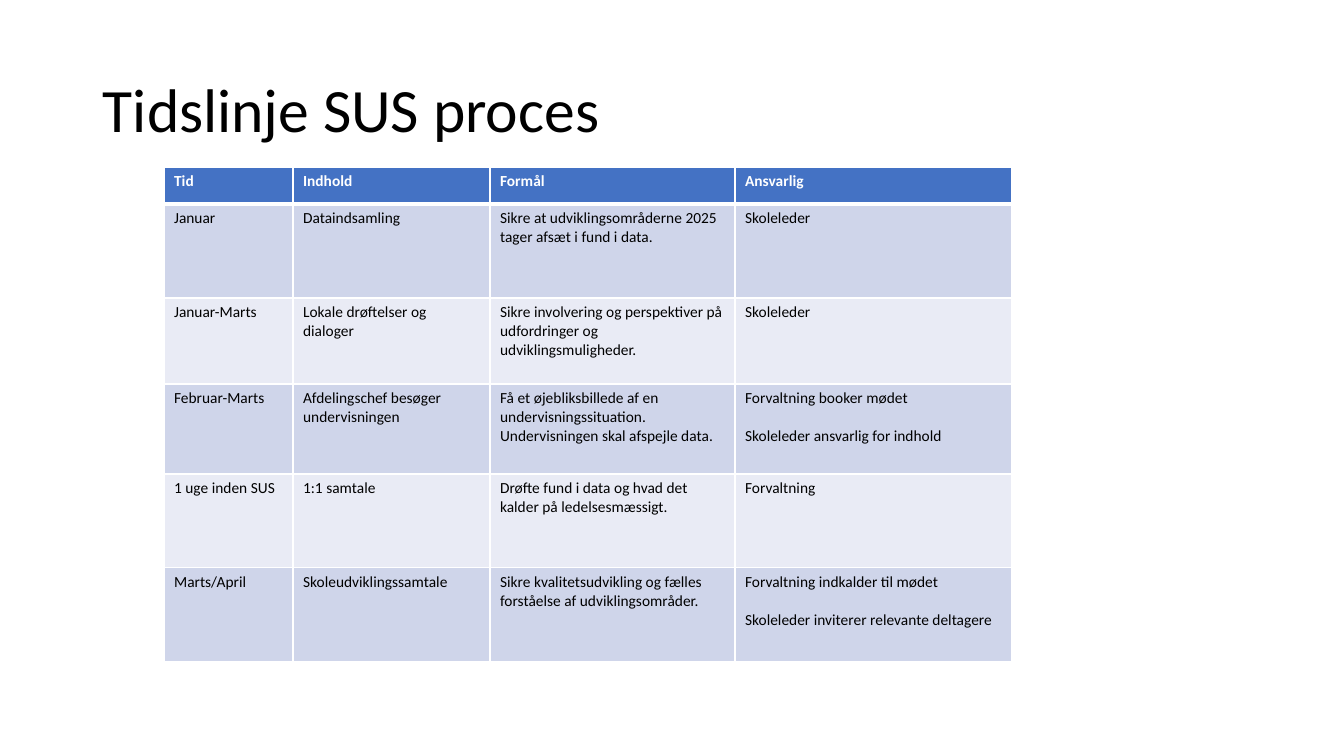
from dataclasses import dataclass

from lxml import etree
from pptx import Presentation
from pptx import util as u
from pptx.dml.color import RGBColor
from pptx.enum import text
from pptx.oxml.ns import qn

PX_PER_INCH = 100.8


@dataclass(frozen=True)
class Theme:
    font: str = "Calibri"
    title_size: int = 44
    table_size: int = 11
    paragraph_gap: float = 13.4
    ink: str = "000000"
    white: str = "FFFFFF"
    header: str = "4472C4"
    bands: tuple = ("E9EBF5", "CFD5EA")
    rule: int = 1
    header_rule: int = 3


THEME = Theme()

COLUMN_WIDTHS = (129, 197, 245, 277)
ROW_HEIGHTS = (37, 94, 86, 90, 94, 94)

# Each cell is a string; a line break starts a new, spaced paragraph.
TIMELINE = (
    ("Tid", "Indhold", "Formål", "Ansvarlig"),
    ("Januar", "Dataindsamling",
     "Sikre at udviklingsområderne 2025 tager afsæt i fund i data.",
     "Skoleleder"),
    ("Januar-Marts", "Lokale drøftelser og dialoger",
     "Sikre involvering og perspektiver på udfordringer og udviklingsmuligheder.",
     "Skoleleder"),
    ("Februar-Marts", "Afdelingschef besøger undervisningen",
     "Få et øjebliksbillede af en undervisningssituation. "
     "Undervisningen skal afspejle data.",
     "Forvaltning booker mødet\nSkoleleder ansvarlig for indhold"),
    ("1 uge inden SUS", "1:1 samtale",
     "Drøfte fund i data og hvad det kalder på ledelsesmæssigt.",
     "Forvaltning"),
    ("Marts/April", "Skoleudviklingssamtale",
     "Sikre kvalitetsudvikling og fælles forståelse af udviklingsområder.",
     "Forvaltning indkalder til mødet\nSkoleleder inviterer relevante deltagere"),
)


def px(length):
    return u.Emu(round(length * u.Inches(1) / PX_PER_INCH))


def add_run(paragraph, wording, size, color, bold=False):
    run = paragraph.add_run()
    run.text = wording
    run.font.name = THEME.font
    run.font.size = u.Pt(size)
    run.font.bold = bold
    run.font.color.rgb = RGBColor.from_string(color)


def add_title(slide, wording, left, top, width, height):
    title = slide.shapes.add_textbox(px(left), px(top), px(width), px(height))
    frame = title.text_frame
    frame.word_wrap = True
    frame.vertical_anchor = text.MSO_ANCHOR.MIDDLE
    frame.paragraphs[0].line_spacing = 0.9
    add_run(frame.paragraphs[0], wording, THEME.title_size, THEME.ink)


def set_borders(cell, top, bottom):
    """Rule the cell in white; top and bottom are line widths in points."""
    properties = cell._tc.get_or_add_tcPr()
    widths = {"a:lnL": THEME.rule, "a:lnR": THEME.rule, "a:lnT": top, "a:lnB": bottom}
    for side, width in widths.items():
        line = etree.SubElement(properties, qn(side), w=str(u.Pt(width)))
        fill = etree.SubElement(line, qn("a:solidFill"))
        etree.SubElement(fill, qn("a:srgbClr"), val=THEME.white)


def fill_cell(cell, wording, row):
    is_header = row == 0
    set_borders(cell,
                top=THEME.header_rule if row == 1 else THEME.rule,
                bottom=THEME.header_rule if is_header else THEME.rule)
    cell.fill.solid()
    cell.fill.fore_color.rgb = RGBColor.from_string(
        THEME.header if is_header else THEME.bands[row % 2])
    frame = cell.text_frame
    for index, line in enumerate(wording.split("\n")):
        paragraph = frame.add_paragraph() if index else frame.paragraphs[0]
        if index:
            paragraph.space_before = u.Pt(THEME.paragraph_gap)
        add_run(paragraph, line, THEME.table_size,
                THEME.white if is_header else THEME.ink, bold=is_header)


def add_timeline(slide, left, top):
    timeline = slide.shapes.add_table(
        len(ROW_HEIGHTS), len(COLUMN_WIDTHS), px(left), px(top),
        px(sum(COLUMN_WIDTHS)), px(sum(ROW_HEIGHTS))).table
    for column, width in zip(timeline.columns, COLUMN_WIDTHS):
        column.width = px(width)
    for row, (height, wordings) in enumerate(zip(ROW_HEIGHTS, TIMELINE)):
        timeline.rows[row].height = px(height)
        for column, wording in enumerate(wordings):
            fill_cell(timeline.cell(row, column), wording, row)


def main():
    deck = Presentation()
    deck.slide_width, deck.slide_height = px(1344), px(756)
    slide = deck.slides.add_slide(deck.slide_layouts[6])
    add_title(slide, "Tidslinje SUS proces", 93, 40, 1159, 146)
    add_timeline(slide, 164, 167)
    deck.save("out.pptx")


if __name__ == "__main__":
    main()
